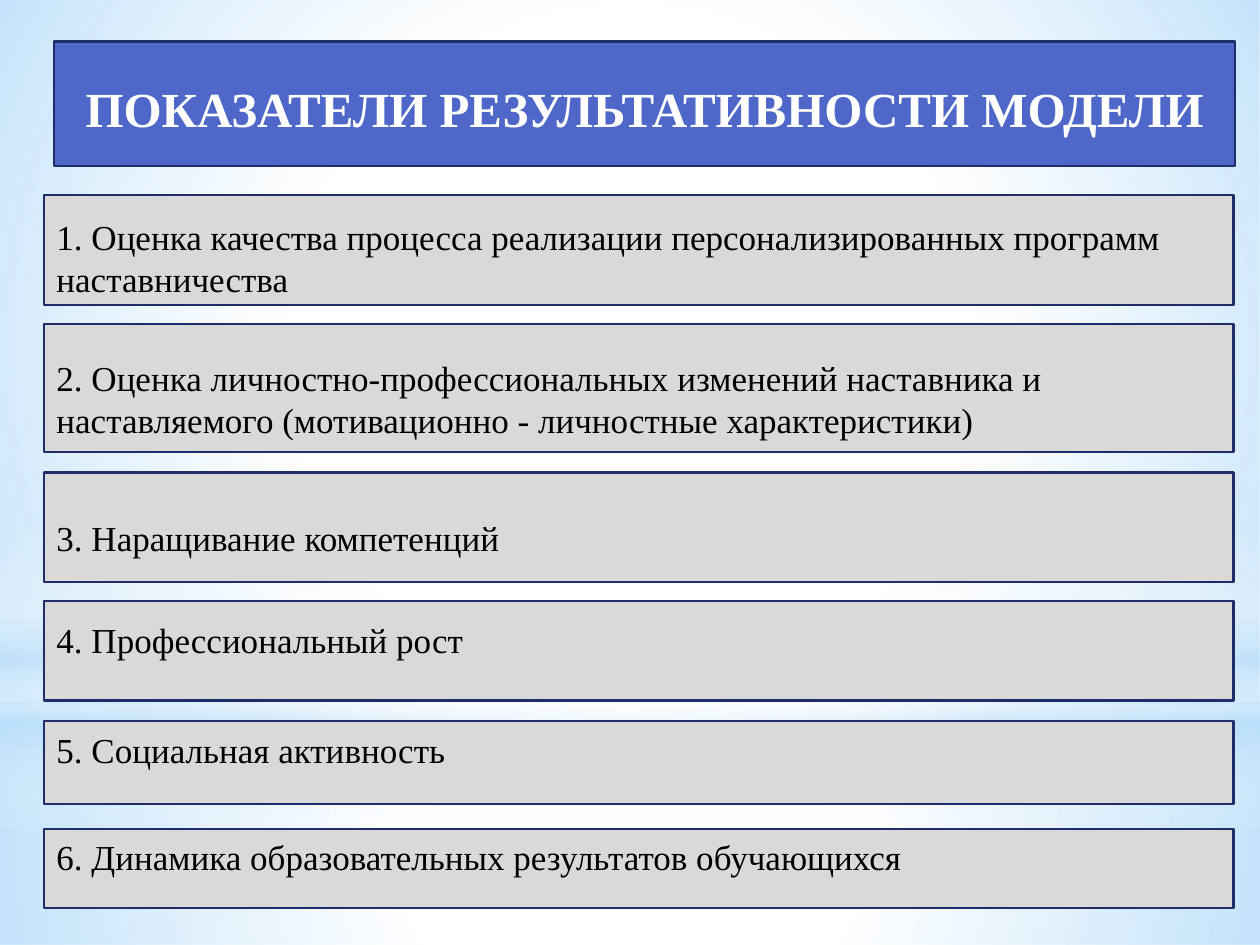
import pptx
import pptx.util
import pptx.dml.color
import pptx.enum.shapes
import pptx.enum.text
import pptx.oxml
import pptx.oxml.ns

SLIDE_W, SLIDE_H = 10, 7.5
FONT = "Times New Roman"
COLORS = {
    "title": "4E67C8", "panel": "D9D9D9", "border": "1F2E69",
    "white": "FFFFFF", "black": "000000", "sky": "B4DCFA",
}

TITLE = "ПОКАЗАТЕЛИ РЕЗУЛЬТАТИВНОСТИ МОДЕЛИ"
TITLE_BOX = (0.43, 0.33, 9.37, 0.99)

PANEL_LEFT, PANEL_W = 0.35, 9.44
# text, top, height, space above the text
INDICATORS = [
    ("1. Оценка качества процесса реализации персонализированных программ наставничества",
     1.55, 0.87, 0.16),
    ("2. Оценка личностно-профессиональных изменений наставника и наставляемого "
     "(мотивационно - личностные характеристики)", 2.57, 1.02, 0.26),
    ("3. Наращивание компетенций", 3.75, 0.87, 0.35),
    ("4. Профессиональный рост", 4.77, 0.79, 0.14),
    ("5. Социальная активность", 5.72, 0.66, 0.06),
    ("6. Динамика образовательных результатов обучающихся", 6.58, 0.63, 0.05),
]

# preset, top, height, linear angle (None = radial), stops: position %, colour, opacity %
GLOWS = [
    ("RECTANGLE", 5.58, 1.92, None,
     [(0, "white", 91), (37, "white", 76), (100, "sky", 79)]),
    ("RECTANGLE", 0, 5.58, None,
     [(0, "white", 89), (48, "white", 62), (100, "sky", 79)]),
    ("RECTANGLE", 4.12, 2.5, 90,
     [(0, "white", 0), (29, "white", 30), (45, "sky", 40),
      (55, "white", 26), (65, "sky", 60), (100, "white", 0)]),
    ("OVAL", 1.75, 5.58, None, [(0, "white", 100), (56, "white", 0)]),
]


def rgb(name):
    return pptx.dml.color.RGBColor.from_string(COLORS[name])


def add_plain(slide, preset, box):
    kind = getattr(pptx.enum.shapes.MSO_SHAPE, preset)
    shape = slide.shapes.add_shape(kind, *map(pptx.util.Inches, box))
    shape.shadow.inherit = False
    return shape


def add_glow(slide, preset, top, height, angle, stops):
    """Full-width background shape with a semi-transparent gradient."""
    glow = add_plain(slide, preset, (0, top, SLIDE_W, height))
    glow.line.fill.background()
    stop_xml = "".join(
        f'<a:gs pos="{pos * 1000}"><a:srgbClr val="{COLORS[color]}">'
        f'<a:alpha val="{alpha * 1000}"/></a:srgbClr></a:gs>'
        for pos, color, alpha in stops)
    if angle is None:
        direction = ('<a:path path="circle"><a:fillToRect l="50000" t="50000" '
                     'r="50000" b="50000"/></a:path>')
    else:
        direction = f'<a:lin ang="{angle * 60000}" scaled="0"/>'
    gradient = pptx.oxml.parse_xml(
        f'<a:gradFill {pptx.oxml.ns.nsdecls("a")} rotWithShape="1">'
        f'<a:gsLst>{stop_xml}</a:gsLst>{direction}</a:gradFill>')
    geometry = glow._element.spPr.find(pptx.oxml.ns.qn("a:prstGeom"))
    geometry.addnext(gradient)


def add_panel(slide, text, box, *, fill, color, size, bold=False, align="LEFT",
              anchor="TOP", inset=0.05, line_spacing=1.0):
    panel = add_plain(slide, "RECTANGLE", box)
    panel.fill.solid()
    panel.fill.fore_color.rgb = rgb(fill)
    panel.line.color.rgb = rgb("border")
    panel.line.width = pptx.util.Pt(1.25)
    frame = panel.text_frame
    frame.word_wrap = True
    frame.vertical_anchor = getattr(pptx.enum.text.MSO_ANCHOR, anchor)
    frame.margin_top = pptx.util.Inches(inset)
    paragraph = frame.paragraphs[0]
    paragraph.alignment = getattr(pptx.enum.text.PP_ALIGN, align)
    paragraph.line_spacing = line_spacing
    run = paragraph.add_run()
    run.text = text
    run.font.name = FONT
    run.font.size = pptx.util.Pt(size)
    run.font.bold = bold
    run.font.color.rgb = rgb(color)


def main():
    deck = pptx.Presentation()
    deck.slide_width = pptx.util.Inches(SLIDE_W)
    deck.slide_height = pptx.util.Inches(SLIDE_H)
    slide = deck.slides.add_slide(deck.slide_layouts[6])
    for glow in GLOWS:
        add_glow(slide, *glow)
    add_panel(slide, TITLE, TITLE_BOX, fill="title", color="white", size=28,
              bold=True, align="CENTER", anchor="MIDDLE", line_spacing=1.15)
    for text, top, height, inset in INDICATORS:
        add_panel(slide, text, (PANEL_LEFT, top, PANEL_W, height),
                  fill="panel", color="black", size=20, inset=inset)
    deck.save("out.pptx")


if __name__ == "__main__":
    main()
